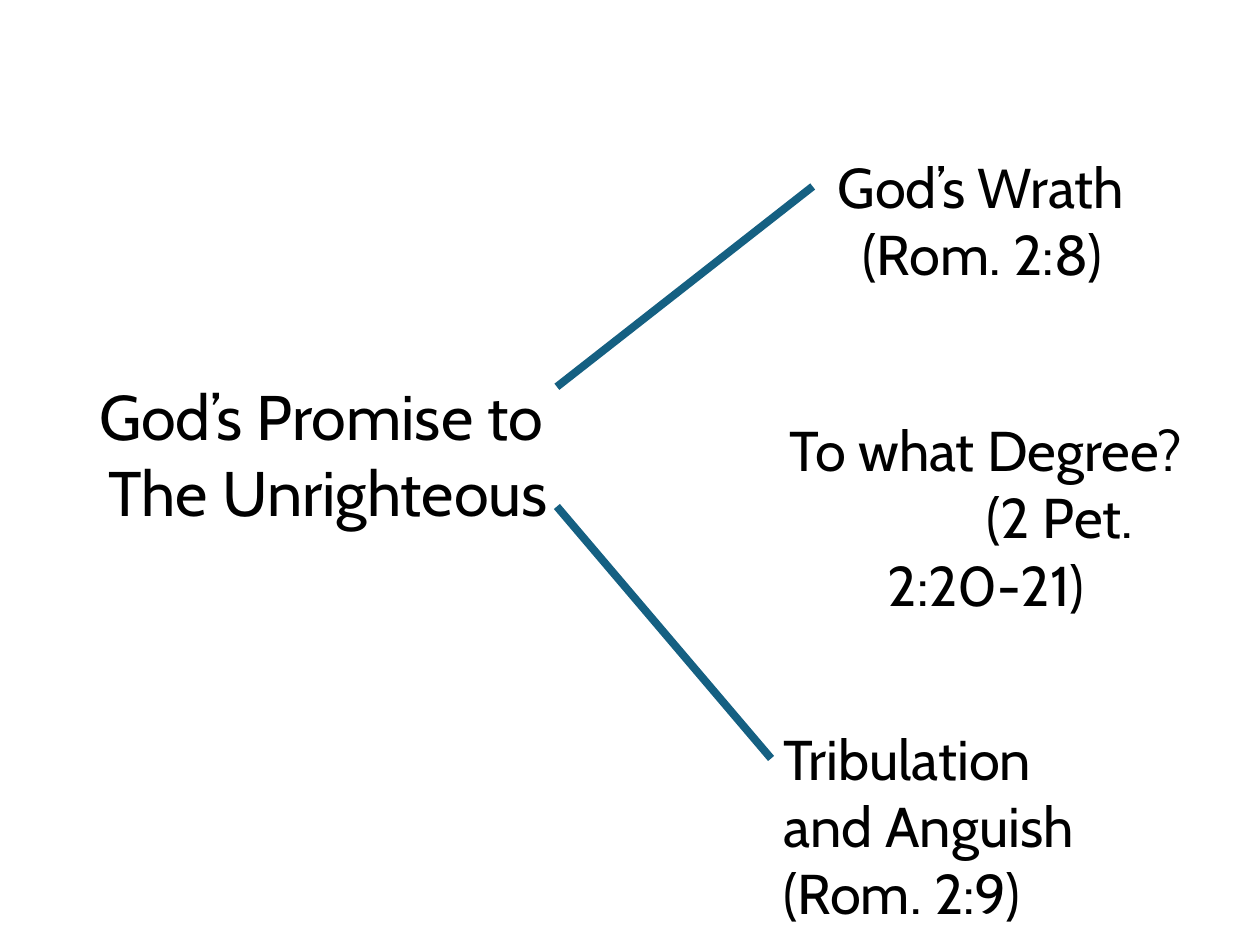
from pptx import Presentation
from pptx.dml.color import RGBColor
from pptx.enum.shapes import MSO_CONNECTOR
from pptx.enum.text import MSO_AUTO_SIZE, PP_ALIGN
from pptx.oxml.ns import qn
from pptx.util import Pt
from lxml import etree

LEFT, CENTER = PP_ALIGN.LEFT, PP_ALIGN.CENTER
STRAIGHT = MSO_CONNECTOR.STRAIGHT
FIT_SHAPE = MSO_AUTO_SIZE.SHAPE_TO_FIT_TEXT
BLACK = RGBColor(0x00, 0x00, 0x00)
TEAL = RGBColor(0x15, 0x60, 0x82)
FONT = "Cabin"
EMU_PER_PX = 9144  # 100 px to the inch


def px(n):
    return n * EMU_PER_PX


def add_text(s, box, lines, size, align=LEFT):
    """Each line is a paragraph text with its first-line indent in px."""
    tb = s.shapes.add_textbox(*map(px, box))
    tf = tb.text_frame
    tf.word_wrap = True
    tf.auto_size = FIT_SHAPE
    for i, (text, indent) in enumerate(lines):
        p = tf.paragraphs[0] if i == 0 else tf.add_paragraph()
        p.text = text
        p.alignment = align
        if indent:
            pPr = p._p.get_or_add_pPr()
            pPr.set("marL", "0")
            pPr.set("indent", str(px(indent)))
        p.font.name = FONT
        p.font.size = Pt(size)
        p.font.color.rgb = BLACK


def add_branch(s, start, end):
    line = s.shapes.add_connector(STRAIGHT, *map(px, start + end))
    line.line.color.rgb = TEAL
    line.line.width = Pt(4.5)
    etree.SubElement(line._element.spPr, qn("a:effectLst"))


def add_promise(s, box):
    add_text(s, box, [("God’s Promise to ", 0), ("The Unrighteous", 0)], 36, CENTER)


def add_outcomes(s, x, y):
    """Three outcomes, stacked from the top left corner of the column."""
    add_text(s, (x + 33, y, 332, 118),
             [("God’s Wrath", 10), ("(Rom. 2:8)", 30)], 32)
    add_text(s, (x, y + 209, 341, 172),
             [("To what Degree?", 0), ("(2 Pet. 2:20-21)", 117)], 32, CENTER)
    add_text(s, (x, y + 454, 297, 172),
             [("Tribulation and Anguish (Rom. 2:9)", 0)], 32)


def main():
    prs = Presentation()
    prs.slide_width, prs.slide_height = px(1000), px(750)
    s = prs.slides.add_slide(prs.slide_layouts[6])
    add_promise(s, (48, 295, 425, 131))
    add_branch(s, (442, 307), (645, 148))
    add_branch(s, (442, 402), (612, 602))
    add_outcomes(s, 612, 116)
    prs.save("out.pptx")


if __name__ == "__main__":
    main()
